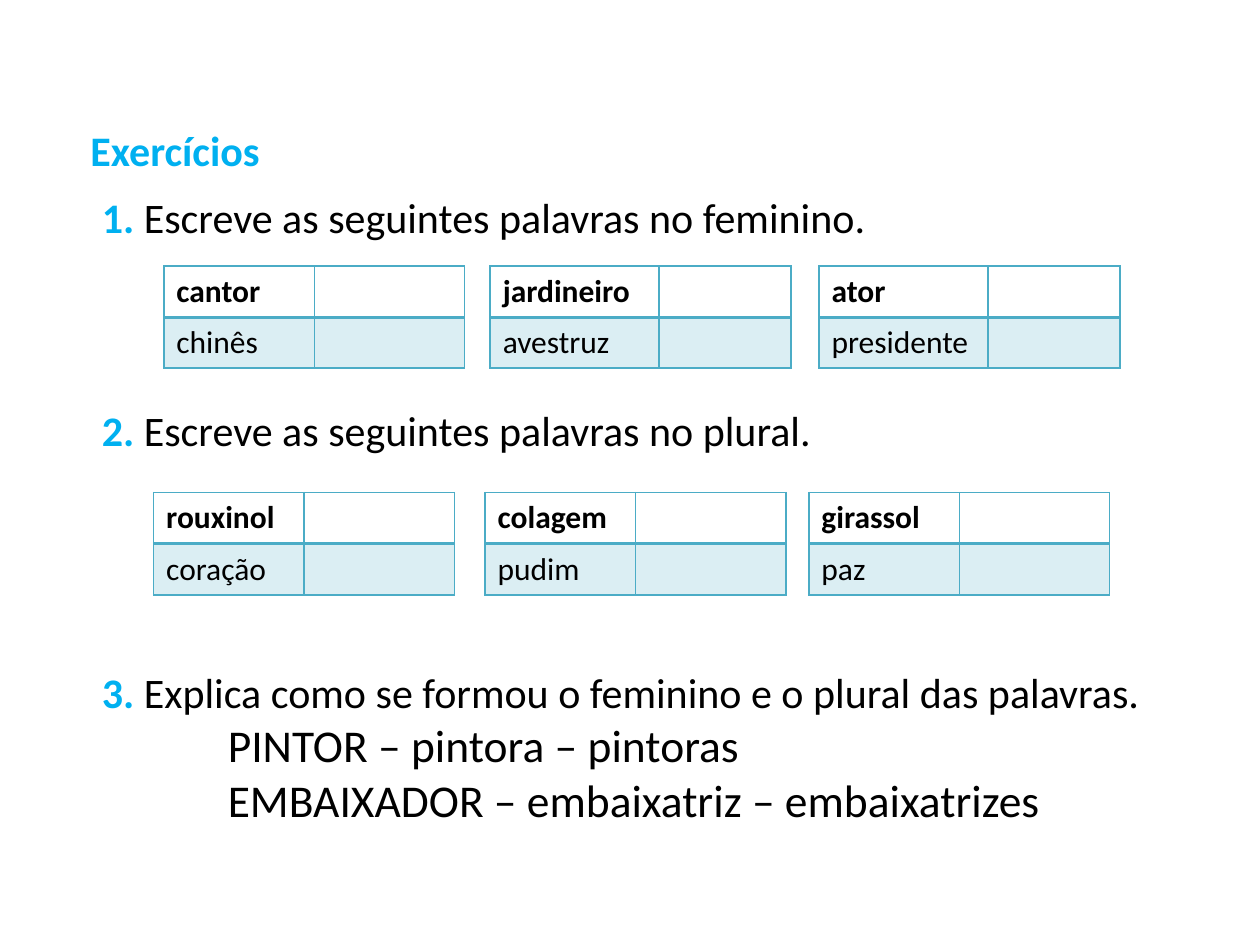
"""Build a Portuguese grammar exercise slide with six word tables."""
from lxml.etree import SubElement
from pptx import Presentation
from pptx.dml.color import RGBColor
from pptx.oxml.ns import qn
from pptx.util import Pt

CYAN = RGBColor(0x00, 0xB0, 0xF0)
BLACK = RGBColor(0x00, 0x00, 0x00)
TEAL = RGBColor(0x4B, 0xAC, 0xC6)

HEADING = dict(size=Pt(24), bold=True, color=CYAN)
QUESTION = dict(size=Pt(24), bold=False, color=BLACK)
EXAMPLE = dict(size=Pt(26), bold=False, color=BLACK)
FIRST_WORD = dict(size=Pt(18), bold=True, color=BLACK)
SECOND_WORD = dict(size=Pt(18), bold=False, color=BLACK)

TITLE = "Exercícios"
QUESTIONS = [
    ("1. ", "Escreve as seguintes palavras no feminino.", 0),
    ("2. ", "Escreve as seguintes palavras no plural.", 93),
    ("3. ", "Explica como se formou o feminino e o plural das palavras.", 121),
]
EXAMPLES = ["PINTOR – pintora – pintoras",
            "EMBAIXADOR – embaixatriz – embaixatrizes"]
EXAMPLE_INDENT = 72

WORD_ROWS = [
    (152, [(93.6, 86, ("cantor", "chinês")),
           (280.1, 96.5, ("jardineiro", "avestruz")),
           (468, 96.5, ("ator", "presidente"))]),
    (281.5, [(87.8, 86, ("rouxinol", "coração")),
             (277.2, 86, ("colagem", "pudim")),
             (462.2, 86, ("girassol", "paz"))]),
]
TABLE_WIDTH, ROW_HEIGHT = 172, 29.2
BORDERS = [dict(lnL=1, lnR=1, lnT=1, lnB=2), dict(lnL=1, lnR=1, lnT=2, lnB=1)]


def add_run(paragraph, text, look):
    run = paragraph.add_run()
    run.text = text
    run.font.name = "Calibri"
    for key, value in look.items():
        if key == "color":
            run.font.color.rgb = value
        else:
            setattr(run.font, key, value)


def add_box(slide, left, top, width, height, wrap):
    box = slide.shapes.add_textbox(Pt(left), Pt(top), Pt(width), Pt(height))
    box.text_frame.word_wrap = wrap
    return box.text_frame


def add_borders(cell, widths):
    properties = cell._tc.get_or_add_tcPr()
    for side, width in widths.items():
        line = SubElement(properties, qn("a:" + side), w=str(Pt(width)))
        SubElement(SubElement(line, qn("a:solidFill")), qn("a:srgbClr"), val=str(TEAL))


def tint(cell):
    cell.fill.solid()
    cell.fill.fore_color.rgb = TEAL
    color = cell._tc.tcPr.find(qn("a:solidFill")).find(qn("a:srgbClr"))
    SubElement(color, qn("a:alpha"), val="20000")


def add_word_table(slide, left, top, word_width, words):
    table = slide.shapes.add_table(2, 2, Pt(left), Pt(top), Pt(TABLE_WIDTH),
                                   Pt(2 * ROW_HEIGHT)).table
    table.first_row = table.horz_banding = False
    for column, width in zip(table.columns, (word_width, TABLE_WIDTH - word_width)):
        column.width = Pt(width)
    looks = (FIRST_WORD, SECOND_WORD)
    for index, (word, look, widths) in enumerate(zip(words, looks, BORDERS)):
        table.rows[index].height = Pt(ROW_HEIGHT)
        for cell in table.rows[index].cells:
            add_borders(cell, widths)
            if index:
                tint(cell)
            else:
                cell.fill.background()
        add_run(table.cell(index, 0).text_frame.paragraphs[0], word, look)


def main():
    deck = Presentation()
    deck.slide_width, deck.slide_height = Pt(720), Pt(540)
    slide = deck.slides.add_slide(deck.slide_layouts[6])

    title = add_box(slide, 44.6, 67.7, 112.3, 36, False)
    add_run(title.paragraphs[0], TITLE, HEADING)

    exercises = add_box(slide, 51.1, 105.8, 629.3, 375.8, True)
    for number, question, gap in QUESTIONS:
        paragraph = exercises.add_paragraph() if gap else exercises.paragraphs[0]
        paragraph.space_before = Pt(gap)
        add_run(paragraph, number, HEADING)
        add_run(paragraph, question, QUESTION)
    for example in EXAMPLES:
        paragraph = exercises.add_paragraph()
        paragraph._p.get_or_add_pPr().set("marL", str(Pt(EXAMPLE_INDENT)))
        add_run(paragraph, example, EXAMPLE)

    for top, tables in WORD_ROWS:
        for left, word_width, words in tables:
            add_word_table(slide, left, top, word_width, words)
    deck.save("out.pptx")


if __name__ == "__main__":
    main()
